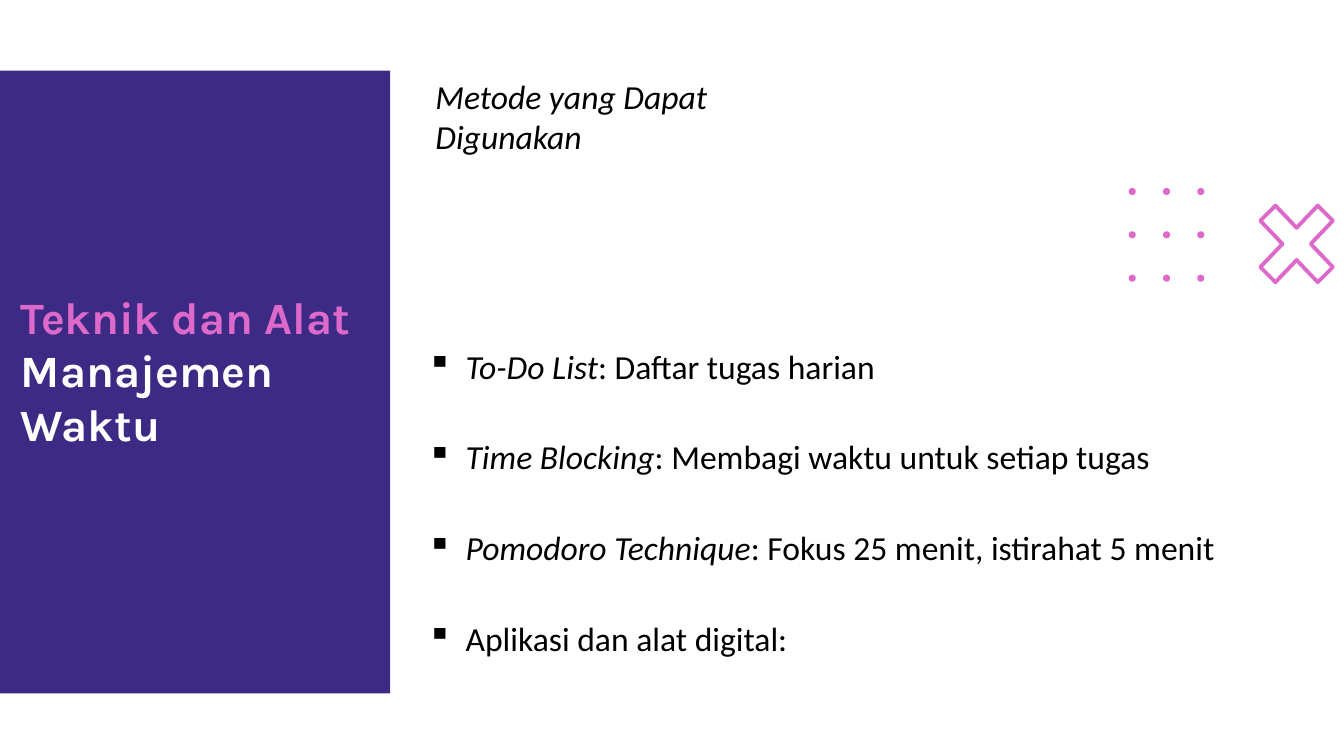
import dataclasses
import itertools

import lxml.etree
import pptx
import pptx.dml.color
import pptx.enum.shapes
import pptx.oxml.ns
import pptx.presentation
import pptx.shapes.autoshape
import pptx.slide
import pptx.util

Inches = pptx.util.Inches
Pt = pptx.util.Pt
RGBColor = pptx.dml.color.RGBColor


@dataclasses.dataclass(frozen=True)
class Theme:
    purple: RGBColor = RGBColor(0x3D, 0x2A, 0x85)
    pink: RGBColor = RGBColor(0xDD, 0x6A, 0xCB)
    white: RGBColor = RGBColor(0xFF, 0xFF, 0xFF)
    black: RGBColor = RGBColor(0, 0, 0)
    title_font: str = "Karla"
    body_font: str = "Calibri"
    title_size: pptx.util.Length = Pt(32)
    body_size: pptx.util.Length = Pt(24)
    dot_line: pptx.util.Length = Pt(0.75)
    cross_line: pptx.util.Length = Pt(2.75)


@dataclasses.dataclass(frozen=True)
class Box:
    left: float
    top: float
    width: float
    height: float

    def lengths(self) -> tuple[pptx.util.Length, ...]:
        return tuple(Inches(value) for value in dataclasses.astuple(self))


@dataclasses.dataclass(frozen=True)
class Method:
    name: str
    description: str


THEME = Theme()
METHODS = (
    Method("To-Do List", ": Daftar tugas harian"),
    Method("Time Blocking", ": Membagi waktu untuk setiap tugas"),
    Method("Pomodoro Technique", ": Fokus 25 menit, istirahat 5 menit"),
    Method("", "Aplikasi dan alat digital:"),
)
METHOD_TOP, METHOD_STEP = 3.38, 0.9
DOT_LEFT, DOT_TOP, DOT_SIZE = 11.2, 1.87, 0.06
DOT_COLUMN_STEP, DOT_ROW_STEP = 0.34, 0.43
CROSS_CENTRE = (12.86, 2.42)
CROSS_RIGHT_HALF = (
    (0, -0.16), (0.21, -0.38), (0.36, -0.23), (0.14, 0),
    (0.36, 0.23), (0.21, 0.38), (0, 0.16),
)


def add_filled_shape(
    slide: pptx.slide.Slide,
    kind: pptx.enum.shapes.MSO_SHAPE,
    box: Box,
    color: RGBColor,
) -> pptx.shapes.autoshape.Shape:
    shape = slide.shapes.add_shape(kind, *box.lengths())
    shape.shadow.inherit = False
    shape.fill.solid()
    shape.fill.fore_color.rgb = color
    shape.line.fill.background()
    return shape


def add_paragraph_box(slide: pptx.slide.Slide, box: Box):
    """Add a wrapping text box and return its first paragraph."""
    frame = slide.shapes.add_textbox(*box.lengths()).text_frame
    frame.word_wrap = True
    return frame.paragraphs[0]


def style_body(paragraph) -> None:
    paragraph.font.name = THEME.body_font
    paragraph.font.size = THEME.body_size
    paragraph.font.color.rgb = THEME.black


def add_cross(slide: pptx.slide.Slide) -> None:
    left_half = [(-x, y) for x, y in reversed(CROSS_RIGHT_HALF[1:-1])]
    centre_x, centre_y = CROSS_CENTRE
    points = [
        (Inches(centre_x + x), Inches(centre_y + y))
        for x, y in itertools.chain(CROSS_RIGHT_HALF, left_half)
    ]
    builder = slide.shapes.build_freeform(*points[0])
    builder.add_line_segments(points[1:], close=True)
    cross = builder.convert_to_shape()
    cross.shadow.inherit = False
    cross.fill.background()
    cross.line.color.rgb = THEME.pink
    cross.line.width = THEME.cross_line


def add_dots(slide: pptx.slide.Slide) -> None:
    for row, column in itertools.product(range(3), repeat=2):
        box = Box(
            DOT_LEFT + column * DOT_COLUMN_STEP,
            DOT_TOP + row * DOT_ROW_STEP,
            DOT_SIZE,
            DOT_SIZE,
        )
        dot = add_filled_shape(slide, pptx.enum.shapes.MSO_SHAPE.OVAL, box, THEME.pink)
        dot.line.color.rgb = THEME.pink
        dot.line.width = THEME.dot_line


def add_title(slide: pptx.slide.Slide) -> None:
    paragraph = add_paragraph_box(slide, Box(0.11, 2.82, 3.65, 1.72))
    for text, color in (
        ("Teknik dan Alat ", THEME.pink),
        ("Manajemen Waktu", THEME.white),
    ):
        run = paragraph.add_run()
        run.text = text
        run.font.color.rgb = color
    paragraph.font.name = THEME.title_font
    paragraph.font.size = THEME.title_size
    paragraph.font.bold = True


def add_subtitle(slide: pptx.slide.Slide) -> None:
    paragraph = add_paragraph_box(slide, Box(4.22, 0.7, 4.36, 0.5))
    paragraph.text = "Metode yang Dapat Digunakan"
    style_body(paragraph)
    paragraph.font.italic = True


def add_square_bullet(paragraph) -> None:
    properties = paragraph._p.get_or_add_pPr()
    properties.set("marL", str(Inches(0.38)))
    properties.set("indent", str(Inches(-0.38)))
    bullet = lxml.etree.SubElement(properties, pptx.oxml.ns.qn("a:buChar"))
    bullet.set("char", "▪")


def add_method(slide: pptx.slide.Slide, method: Method, top: float) -> None:
    paragraph = add_paragraph_box(slide, Box(4.14, top, 8.07, 0.5))
    add_square_bullet(paragraph)
    style_body(paragraph)
    if method.name:
        name_run = paragraph.add_run()
        name_run.text = method.name
        name_run.font.italic = True
    paragraph.add_run().text = method.description


def main() -> None:
    presentation = pptx.Presentation()
    presentation.slide_width = Inches(13.33)
    presentation.slide_height = Inches(7.5)
    slide = presentation.slides.add_slide(presentation.slide_layouts[6])
    add_cross(slide)
    add_dots(slide)
    add_subtitle(slide)
    add_filled_shape(
        slide,
        pptx.enum.shapes.MSO_SHAPE.RECTANGLE,
        Box(0, 0.7, 3.87, 6.18),
        THEME.purple,
    )
    add_title(slide)
    for index, method in enumerate(METHODS):
        add_method(slide, method, METHOD_TOP + index * METHOD_STEP)
    presentation.save("out.pptx")


if __name__ == "__main__":
    main()
